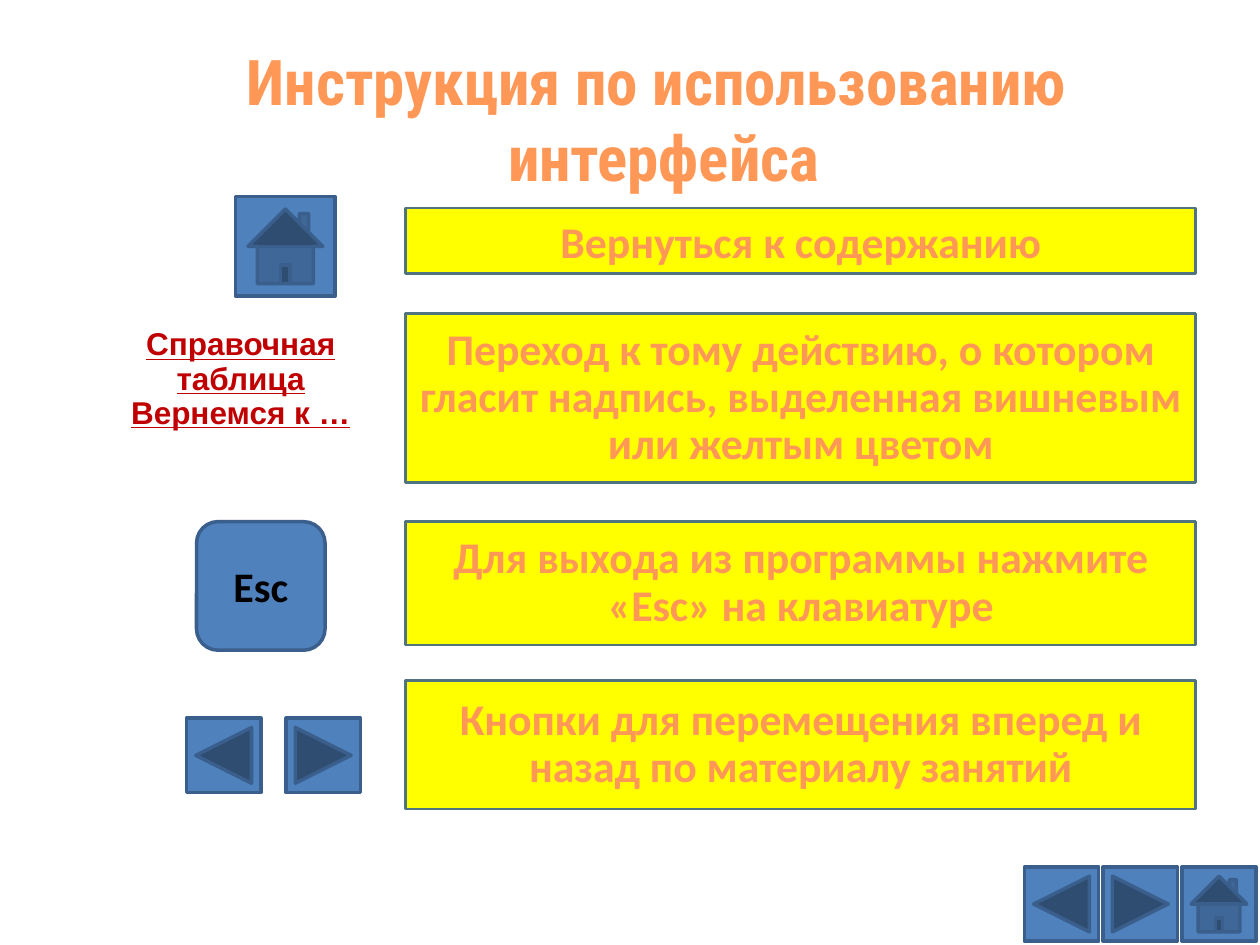
import pptx
import pptx.util
import pptx.dml.color
import pptx.enum.shapes
import pptx.enum.text

Inches = pptx.util.Inches
Pt = pptx.util.Pt
RGBColor = pptx.dml.color.RGBColor
SHAPE = pptx.enum.shapes.MSO_SHAPE
ALIGN = pptx.enum.text.PP_ALIGN
ANCHOR = pptx.enum.text.MSO_ANCHOR
AUTOSIZE = pptx.enum.text.MSO_AUTO_SIZE

ORANGE = RGBColor(0xFF, 0x98, 0x56)
YELLOW = RGBColor(0xFF, 0xFF, 0x00)
TEAL = RGBColor(0x4F, 0x74, 0x80)
BLUE = RGBColor(0x4F, 0x81, 0xBD)
DARK_BLUE = RGBColor(0x3A, 0x5F, 0x8C)
CHERRY = RGBColor(0xC0, 0x00, 0x00)
BLACK = RGBColor(0x00, 0x00, 0x00)

TITLE_FONT = {"name": "Roboto Condensed", "size": Pt(36), "bold": True}
ANSWER_FONT = {"name": "Calibri", "size": Pt(25), "bold": True}
LINK_FONT = {"name": "Arial", "size": Pt(18), "bold": True, "underline": True}
KEY_FONT = {"name": "Calibri", "size": Pt(24), "bold": True}

ANSWER_LEFT, ANSWER_WIDTH = 3.22, 6.27
BUTTON = 0.59


def write(frame, lines, font, color, spacing=1.0, **frame_format):
    for name, value in frame_format.items():
        setattr(frame, name, value)
    for index, line in enumerate(lines):
        paragraph = frame.paragraphs[0] if index == 0 else frame.add_paragraph()
        paragraph.alignment = ALIGN.CENTER
        paragraph.line_spacing = spacing
        paragraph.space_before = Pt(0)
        run = paragraph.add_run()
        run.text = line
        for name, value in font.items():
            setattr(run.font, name, value)
        run.font.color.rgb = color


def add_block(slide, kind, box, fill, line, line_width):
    block = slide.shapes.add_shape(kind, *map(Inches, box))
    block.shadow.inherit = False
    block.fill.solid()
    block.fill.fore_color.rgb = fill
    block.line.color.rgb = line
    block.line.width = Pt(line_width)
    return block


def add_key(slide, kind, left, top, size):
    return add_block(slide, kind, (left, top, size, size), BLUE, DARK_BLUE, 2)


def add_title(slide, box):
    title = slide.shapes.title
    title.left, title.top, title.width, title.height = map(Inches, box)
    write(title.text_frame, ["Инструкция по использованию", " интерфейса"],
          TITLE_FONT, ORANGE, word_wrap=False, auto_size=AUTOSIZE.NONE,
          vertical_anchor=ANCHOR.TOP)


def add_answer(slide, top, height, text, spacing):
    answer = add_block(slide, SHAPE.FLOWCHART_PROCESS,
                       (ANSWER_LEFT, top, ANSWER_WIDTH, height), YELLOW, TEAL, 1.5)
    write(answer.text_frame, [text], ANSWER_FONT, ORANGE, spacing,
          word_wrap=True, vertical_anchor=ANCHOR.MIDDLE)


def add_links(slide, box):
    links = slide.shapes.add_textbox(*map(Inches, box))
    write(links.text_frame, ["Справочная таблица", "Вернемся к …"],
          LINK_FONT, CHERRY, 0.9, word_wrap=True)


def add_escape_key(slide, left, top, size):
    escape = add_key(slide, SHAPE.ROUNDED_RECTANGLE, left, top, size)
    write(escape.text_frame, ["Esc"], KEY_FONT, BLACK,
          word_wrap=True, vertical_anchor=ANCHOR.MIDDLE)


def add_button_row(slide, left, top, step, kinds):
    for index, kind in enumerate(kinds):
        add_key(slide, kind, left + index * step, top, BUTTON)


def build_instructions(slide):
    add_title(slide, (1.54, 0.29, 7.34, 1.02))
    answers = [
        (1.65, 0.52, "Вернуться к содержанию", 1.0),
        (2.49, 1.34, "Переход к тому действию, о котором гласит надпись, "
                     "выделенная вишневым или желтым цветом", 0.9),
        (4.14, 0.98, "Для выхода из программы нажмите «Esc» на клавиатуре", 0.9),
        (5.4, 1.02, "Кнопки для перемещения вперед и назад по материалу занятий", 0.9),
    ]
    for answer in answers:
        add_answer(slide, *answer)

    back_and_next = [SHAPE.ACTION_BUTTON_BACK_OR_PREVIOUS,
                     SHAPE.ACTION_BUTTON_FORWARD_OR_NEXT]
    add_key(slide, SHAPE.ACTION_BUTTON_HOME, 1.87, 1.56, 0.79)
    add_links(slide, (0.75, 2.56, 2.32, 0.92))
    add_escape_key(slide, 1.56, 4.14, 1.02)
    add_button_row(slide, 1.48, 5.7, 0.79, back_and_next)
    add_button_row(slide, 8.13, 6.88, 0.625, back_and_next + [SHAPE.ACTION_BUTTON_HOME])


def main():
    deck = pptx.Presentation()
    deck.slide_width, deck.slide_height = Inches(10), Inches(7.5)
    build_instructions(deck.slides.add_slide(deck.slide_layouts[5]))
    deck.save("out.pptx")


if __name__ == "__main__":
    main()
